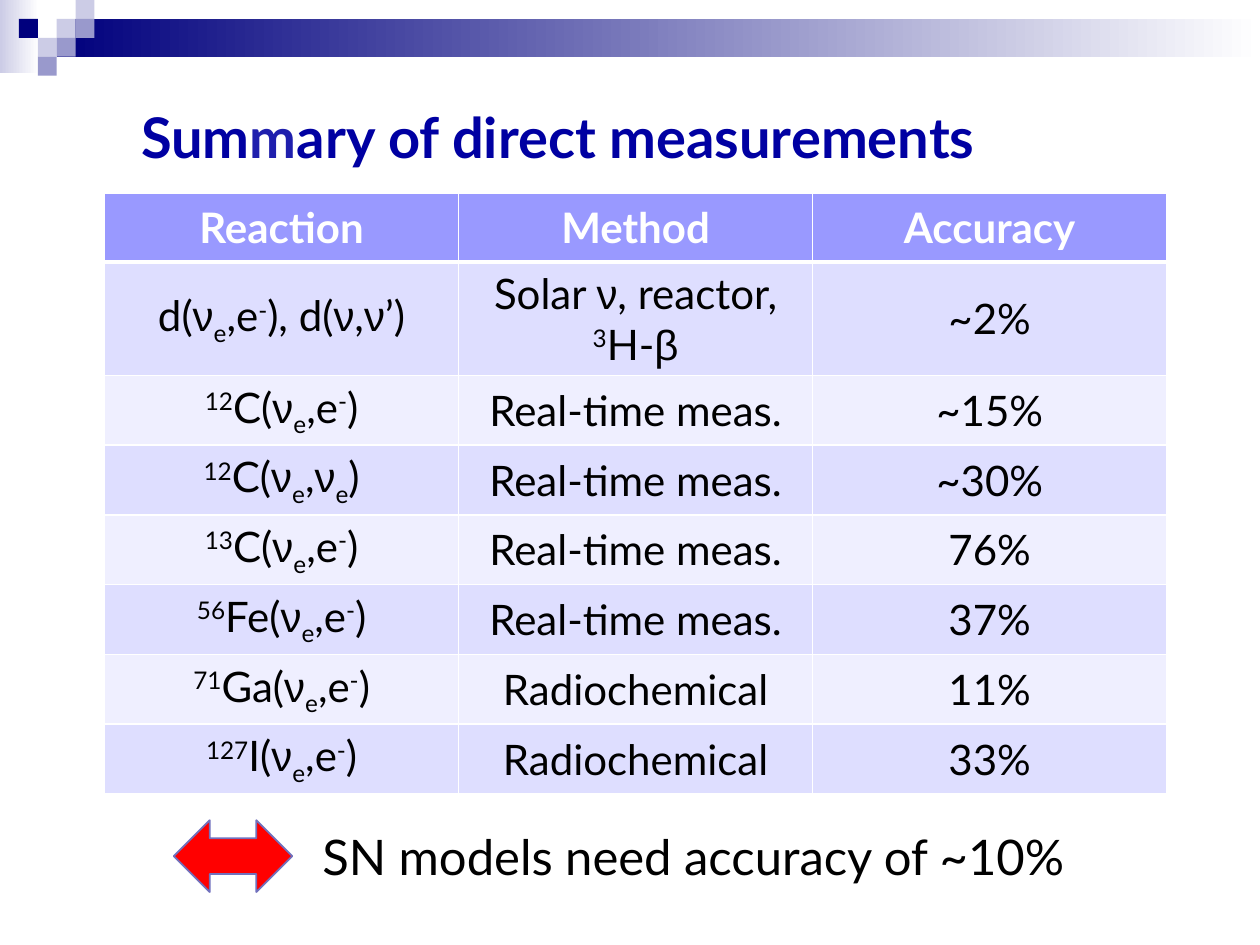
from dataclasses import dataclass
from itertools import groupby

from lxml.etree import SubElement
from pptx import Presentation
from pptx.dml.color import RGBColor
from pptx.enum.shapes import MSO_SHAPE as Shape
from pptx.enum.text import MSO_ANCHOR as Anchor, MSO_AUTO_SIZE as AutoSize, PP_ALIGN as Align
from pptx.oxml.ns import qn
from pptx.util import Pt

PX = 9144


@dataclass(frozen=True)
class Theme:
    font: str = "Lato"
    greek_font: str = "Arial"
    title_size: int = 32
    note_size: int = 28
    table_size: int = 24
    navy: str = "00007D"
    lilac: str = "CCCCE6"
    violet: str = "9999CC"
    white: str = "FFFFFF"
    black: str = "000000"
    title: str = "0000A2"
    title_tint: str = "1F1FAD"
    header: str = "9999FF"
    bands: tuple = ("DEDEFF", "EFEFFF")
    arrow: str = "FF0000"
    arrow_line: str = "7171BD"


THEME = Theme()
BASELINES = {"^": "30000", "_": "-25000"}
TINT_MARK = "*"

REACTIONS = [
    ("d(ν|_e|,e|^-|), d(ν,ν’)", "Solar ν, reactor,\n^3|H-β", "~2%"),
    ("^12|C(ν|_e|,e|^-|)", "Real-time meas.", "~15%"),
    ("^12|C(ν|_e|,ν|_e|)", "Real-time meas.", "~30%"),
    ("^13|C(ν|_e|,e|^-|)", "Real-time meas.", "76%"),
    ("^56|Fe(ν|_e|,e|^-|)", "Real-time meas.", "37%"),
    ("^71|Ga(ν|_e|,e|^-|)", "Radiochemical", "11%"),
    ("^127|I(ν|_e|,e|^-|)", "Radiochemical", "33%"),
]


def rgb(color):
    return RGBColor.from_string(color)


def is_greek(letter):
    return "α" <= letter <= "ω"


def write_text(frame, text, size, color, tint=None, bold=False, align=Align.LEFT):
    for index, line in enumerate(text.split("\n")):
        paragraph = frame.add_paragraph() if index else frame.paragraphs[0]
        paragraph.alignment = align
        for part in line.split("|"):
            mark = part[0] if part[0] in (*BASELINES, TINT_MARK) else ""
            for greek, letters in groupby(part[len(mark):], is_greek):
                run = paragraph.add_run()
                run.text = "".join(letters)
                run.font.name = THEME.greek_font if greek else THEME.font
                run.font.size = Pt(size)
                run.font.bold = bold
                run.font.color.rgb = rgb(tint if mark == TINT_MARK else color)
                if mark in BASELINES:
                    run.font._element.set("baseline", BASELINES[mark])


def place(part, box):
    part.left, part.top, part.width, part.height = (value * PX for value in box)


def add_block(slide, box, *colors, kind=Shape.RECTANGLE, line=None):
    block = slide.shapes.add_shape(kind, *(value * PX for value in box))
    block.shadow.inherit = False
    if len(colors) > 1:
        block.fill.gradient()
        block.fill.gradient_angle = 0
        for stop, color in zip(block.fill.gradient_stops, colors):
            stop.color.rgb = rgb(color)
    else:
        block.fill.solid()
        block.fill.fore_color.rgb = rgb(colors[0])
    if line:
        block.line.color.rgb = rgb(line)
        block.line.width = Pt(1)
    else:
        block.line.fill.background()


def add_banner(slide, box):
    left, top, width, height = box
    tile = 15
    bar_left = left + 3 * tile
    add_block(slide, (left, top, 31, height), THEME.lilac, THEME.white)
    add_block(slide, (bar_left, top + tile, width - 3 * tile, 2 * tile), THEME.navy, THEME.white)
    tiles = [
        (3, 1, THEME.lilac), (4, 0, THEME.lilac), (4, 1, THEME.violet), (2, 2, THEME.lilac),
        (1, 1, THEME.navy), (3, 2, THEME.violet), (2, 3, THEME.violet),
    ]
    for column, row, color in tiles:
        add_block(slide, (left + column * tile, top + row * tile, tile, tile), color)


def add_title(slide, box):
    title = slide.shapes.title
    place(title, box)
    frame = title.text_frame
    frame.auto_size = AutoSize.NONE
    frame.vertical_anchor = Anchor.TOP
    frame.word_wrap = False
    write_text(frame, "Sum|*m|ary of direct measurements", THEME.title_size, THEME.title,
               tint=THEME.title_tint, bold=True)


def set_borders(cell, bottom):
    properties = cell._tc.get_or_add_tcPr()
    for side, width in {"L": 1, "R": 1, "T": 1, "B": bottom}.items():
        border = SubElement(properties, qn(f"a:ln{side}"), w=str(Pt(width)))
        fill = SubElement(border, qn("a:solidFill"))
        SubElement(fill, qn("a:srgbClr"), val=THEME.white)


def add_reaction_table(slide, box):
    rows = [("Reaction", "Method", "Accuracy"), *REACTIONS]
    left, top, width, height = (value * PX for value in box)
    table = slide.shapes.add_table(len(rows), len(rows[0]), left, top, width, height).table
    row_height = 55 * PX
    for row in table.rows:
        row.height = row_height
    table.rows[1].height = height - row_height * (len(rows) - 1)
    for row_index, row in enumerate(rows):
        header = row_index == 0
        band = THEME.header if header else THEME.bands[(row_index - 1) % 2]
        for column, text in enumerate(row):
            cell = table.cell(row_index, column)
            set_borders(cell, bottom=3 if header else 1)
            cell.fill.solid()
            cell.fill.fore_color.rgb = rgb(band)
            cell.vertical_anchor = Anchor.MIDDLE
            write_text(cell.text_frame, text, THEME.table_size,
                       THEME.white if header else THEME.black, bold=header, align=Align.CENTER)


def add_requirement(slide, box):
    left, top, width, height = box
    arrow_width, gap = 94, 14
    add_block(slide, (left, top, arrow_width, height), THEME.arrow,
              kind=Shape.LEFT_RIGHT_ARROW, line=THEME.arrow_line)
    offset = arrow_width + gap
    note = slide.shapes.add_textbox(
        *(value * PX for value in (left + offset, top, width - offset, height)))
    note.text_frame.word_wrap = False
    write_text(note.text_frame, "SN models need accuracy of ~10%", THEME.note_size, THEME.black)


def main():
    deck = Presentation()
    deck.slide_width, deck.slide_height = 1000 * PX, 750 * PX
    slide = deck.slides.add_slide(deck.slide_layouts[5])
    add_banner(slide, (0, 0, 1000, 58))
    add_title(slide, (102, 76, 783, 64))
    add_reaction_table(slide, (83, 153, 843, 475))
    add_requirement(slide, (138, 651, 740, 57))
    deck.save("out.pptx")


if __name__ == "__main__":
    main()
